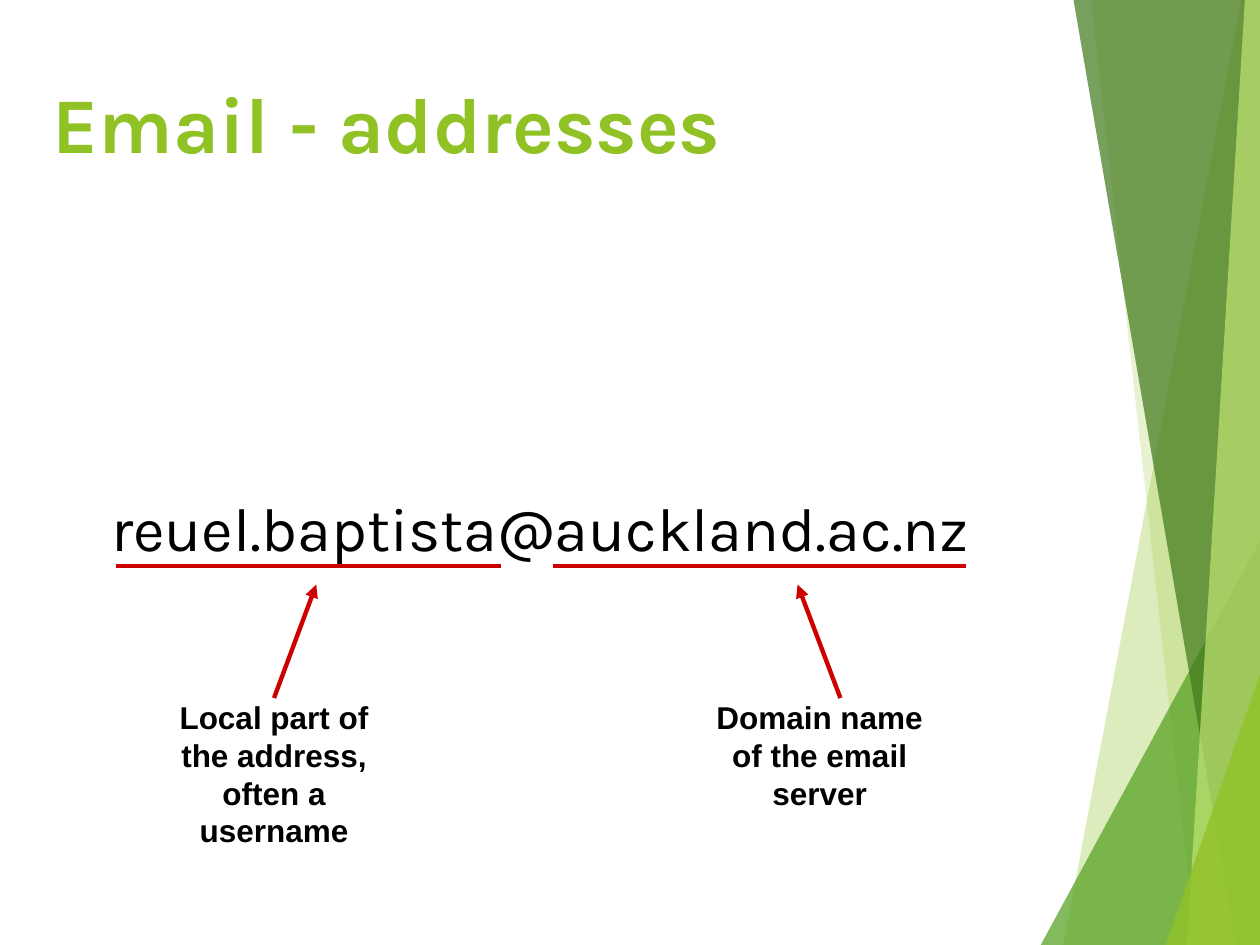
from lxml import etree
from pptx import Presentation
from pptx.dml.color import RGBColor
from pptx.enum.shapes import MSO_CONNECTOR
from pptx.enum.text import MSO_ANCHOR, PP_ALIGN
from pptx.oxml.ns import qn
from pptx.util import Inches, Pt

RED = "CC0000"
GREEN = "90C226"
BLACK = "000000"
FACETS = [
    ([(9.85, 0), (8.44, 7.5), (10, 7.5), (10, 0)], GREEN, 30),
    ([(8.66, 0), (9.49, 7.5), (10, 7.5), (10, 0)], GREEN, 20),
    ([(8.26, 7.5), (10, 4.29), (10, 7.5)], "54A021", 72),
    ([(8.52, 0), (9.81, 7.5), (10, 7.5), (10, 0)], "3F7819", 70),
    ([(9.88, 0), (9.42, 7.5), (10, 7.5), (10, 0)], "C0E474", 70),
    ([(9.25, 7.5), (10, 5.35), (10, 7.5)], GREEN, 80),
]


def rgb(color):
    return RGBColor.from_string(color)


def add_facet(slide, points, color, opacity):
    start, *rest = [(Inches(x), Inches(y)) for x, y in points]
    builder = slide.shapes.build_freeform(*start)
    builder.add_line_segments(rest, close=True)
    sp = builder.convert_to_shape()
    sp.shadow.inherit = False
    sp.fill.solid()
    sp.fill.fore_color.rgb = rgb(color)
    sp.line.fill.background()
    clr = sp.fill._xPr.find(".//" + qn("a:srgbClr"))
    etree.SubElement(clr, qn("a:alpha")).set("val", str(opacity * 1000))


def add_text(slide, text, box, size, font, color=BLACK, bold=False,
             align=PP_ALIGN.CENTER, anchor=MSO_ANCHOR.MIDDLE):
    sp = slide.shapes.add_textbox(*map(Inches, box))
    tf = sp.text_frame
    tf.word_wrap = True
    tf.vertical_anchor = anchor
    p = tf.paragraphs[0]
    p.text = text
    p.alignment = align
    p.font.size = Pt(size)
    p.font.name = font
    p.font.bold = bold
    p.font.color.rgb = rgb(color)
    return sp


def add_label(slide, text, left):
    sp = add_text(slide, text, (left, 5.54, 1.95, 1.26), 18, "Arial",
                  bold=True, anchor=MSO_ANCHOR.TOP)
    tf = sp.text_frame
    tf.margin_left = tf.margin_right = Inches(0.04)
    tf.margin_top = tf.margin_bottom = 0
    return sp


def add_line(slide, start, end, arrow=False):
    line = slide.shapes.add_connector(
        MSO_CONNECTOR.STRAIGHT, *map(Inches, start + end))
    line.line.color.rgb = rgb(RED)
    line.line.width = Pt(2.5)
    if arrow:
        ln = line.line._get_or_add_ln()
        etree.SubElement(ln, qn("a:tailEnd")).set("type", "triangle")
    etree.SubElement(line._element.spPr, qn("a:effectLst"))
    return line


def main():
    prs = Presentation()
    prs.slide_width, prs.slide_height = Inches(10), Inches(7.5)
    slide = prs.slides.add_slide(prs.slide_layouts[6])

    for points, color, opacity in FACETS:
        add_facet(slide, points, color, opacity)

    add_text(slide, "Email - addresses", (0.32, 0.37, 7.94, 1.19), 45, "Karla",
             GREEN, bold=True, align=PP_ALIGN.LEFT)
    add_text(slide, "reuel.baptista@auckland.ac.nz", (0.32, 1.56, 7.94, 5.24),
             35, "Karla")

    for left, right in [(0.92, 3.98), (4.39, 7.67)]:
        add_line(slide, (left, 4.49), (right, 4.49))

    local = add_label(slide, "Local part of the address, often a username", 1.2)
    add_label(slide, "Domain name of the email server", 5.53)
    arrow = add_line(slide, (2.17, 5.54), (2.51, 4.64), arrow=True)
    arrow.begin_connect(local, 0)
    add_line(slide, (6.67, 5.54), (6.33, 4.64), arrow=True)

    prs.save("out.pptx")


if __name__ == "__main__":
    main()
